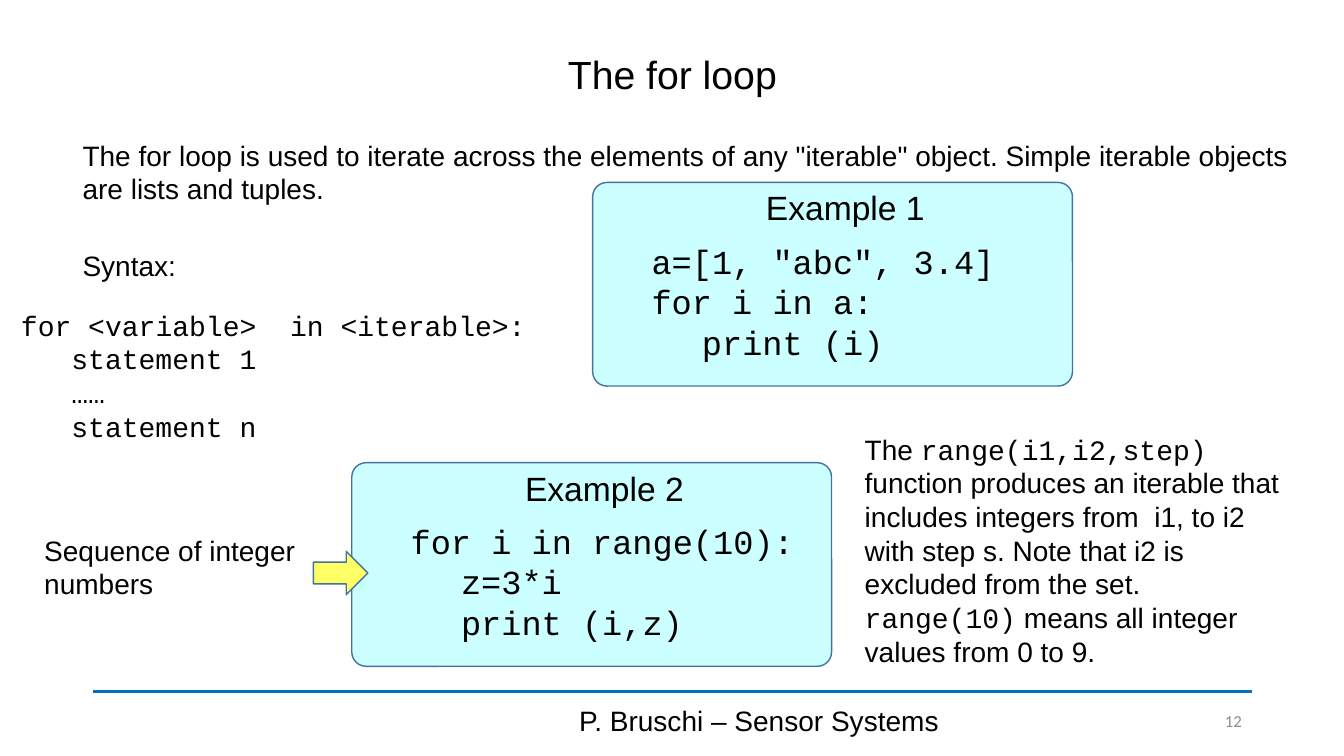
from lxml import etree
from pptx import Presentation, util as u
from pptx.dml import color
from pptx.enum import shapes, text

COLS, ROWS = 133.33, 75
CELL = u.Inches(0.1)
SANS, MONO = "Arial", "Courier New"
MID, LEFT, RIGHT = text.PP_ALIGN.CENTER, text.PP_ALIGN.LEFT, text.PP_ALIGN.RIGHT


def rgb(code):
    """Turn a hex string into a colour."""
    return color.RGBColor.from_string(code)


def grid(*cells):
    """Turn grid cells into slide lengths."""
    return [round(cell * CELL) for cell in cells]


def apply(item, **form):
    """Set each format value on an item."""
    for name, value in form.items():
        setattr(item, name, value)


def fill(frame, paras, size, font=SANS, tone="000000", **form):
    """Write paragraphs, each a string or a list of (words, font) runs."""
    for num, runs in enumerate(paras):
        para = frame.paragraphs[0] if num == 0 else frame.add_paragraph()
        apply(para, **form)
        for words, face in [(runs, font)] if isinstance(runs, str) else runs:
            run = para.add_run()
            run.text = words
            apply(run.font, name=face, size=u.Pt(size))
            run.font.color.rgb = rgb(tone)


def write(slide, box, paras, size=20, wrap=True, anchor=text.MSO_ANCHOR.TOP, **form):
    """Add a text box."""
    frame = slide.shapes.add_textbox(*grid(*box)).text_frame
    apply(frame, word_wrap=wrap, vertical_anchor=anchor)
    fill(frame, paras, size, **form)


def draw(slide, kind, box, tone):
    """Add a filled shape with a thin blue outline."""
    shape = slide.shapes.add_shape(kind, *grid(*box))
    shape.shadow.inherit = False
    shape.fill.solid()
    shape.fill.fore_color.rgb = rgb(tone)
    shape.line.color.rgb = rgb("43739E")
    shape.line.width = u.Pt(1)
    return shape


def head(slide, box):
    """Place the title."""
    title = slide.shapes.title
    left, top, width, height = grid(*box)
    apply(title, left=left, top=top, width=width, height=height)
    apply(title.text_frame, vertical_anchor=text.MSO_ANCHOR.MIDDLE)
    fill(title.text_frame, ["The for loop"], 28, alignment=MID, line_spacing=0.9)


def foot(slide, box):
    """Draw the rule with the course name and page number below it."""
    left, top, width, height = box
    rule = slide.shapes.add_connector(
        shapes.MSO_CONNECTOR.STRAIGHT, *grid(left, top, left + width, top))
    rule.line.color.rgb = rgb("0070C0")
    rule.line.width = u.Pt(2.75)
    space = "{http://schemas.openxmlformats.org/drawingml/2006/main}"
    etree.SubElement(rule.element.spPr, space + "effectLst")
    row = top + 0.9
    mid = text.MSO_ANCHOR.MIDDLE
    write(slide, (left + 35, row, 62.2, height), ["P. Bruschi – Sensor Systems"],
          anchor=mid, alignment=MID)
    write(slide, (left + width - 9.6, row, 9.6, height), ["12"], 12,
          anchor=mid, font="Calibri", tone="8C8C8C", alignment=RIGHT)


def intro(slide, box):
    """Explain the loop and show its syntax."""
    left, top, width, height = box
    write(slide, (left, top, width, height), [
        'The for loop is used to iterate across the elements of any "iterable" object. '
        "Simple iterable objects are lists and tuples."])
    write(slide, (left, top + 11, 23.9, 4.4), ["Syntax:"])
    write(slide, (left - 6.1, top + 16.9, 52.8, 14.5), [
        "for <variable>  in <iterable>:", "\tstatement 1", "\t……", "\tstatement n"],
        font=MONO)


def sample(slide, box, label, code):
    """Draw a card with a heading and code."""
    left, top, width, height = box
    card = draw(slide, shapes.MSO_SHAPE.ROUNDED_RECTANGLE, box, "CCFFFF")
    card.adjustments[0] = 0.07
    write(slide, (left + 4.85, top + 5.3, width - 6.8, height - 7.1), code, 24, font=MONO)
    write(slide, (left + 16.2, top, 17.9, 5), [label], 24, wrap=False, alignment=LEFT)


def hint(slide, box):
    """Point from a short remark to the second card."""
    left, top, width, height = box
    write(slide, box, ["Sequence of integer numbers"])
    draw(slide, shapes.MSO_SHAPE.RIGHT_ARROW,
         (left + width - 5.4, top + 2.3, 5.4, 4.3), "FFFF66")


def note(slide, box):
    """Explain the range function."""
    write(slide, box, [
        [("The ", SANS), ("range(i1,i2,step)", MONO),
         (" function produces an iterable that includes integers from  i1, to i2 "
          "with step s. Note that i2 is excluded from the set.", SANS)],
        [("range(10)", MONO), (" means all integer values from 0 to 9.", SANS)]])


def main():
    """Build and save the slide."""
    deck = Presentation()
    deck.slide_width, deck.slide_height = grid(COLS, ROWS)
    slide = deck.slides.add_slide(deck.slide_layouts[5])
    head(slide, (9.2, 4, 115, 7.2))
    foot(slide, (9.2, 68.6, 115, 4))
    intro(slide, (7.2, 13.2, 122.5, 7.7))
    sample(slide, (58.8, 18.1, 47.6, 20.2), "Example 1",
           ['a=[1, "abc", 3.4]', "for i in a:", "\tprint (i)"])
    sample(slide, (34.9, 45.9, 47.6, 20.2), "Example 2",
           ["for i in range(10):", "\tz=3*i", "\tprint (i,z)"])
    note(slide, (84.8, 42.4, 44.9, 24.6))
    hint(slide, (3.4, 52.4, 33.1, 7.7))
    deck.save("out.pptx")


if __name__ == "__main__":
    main()
